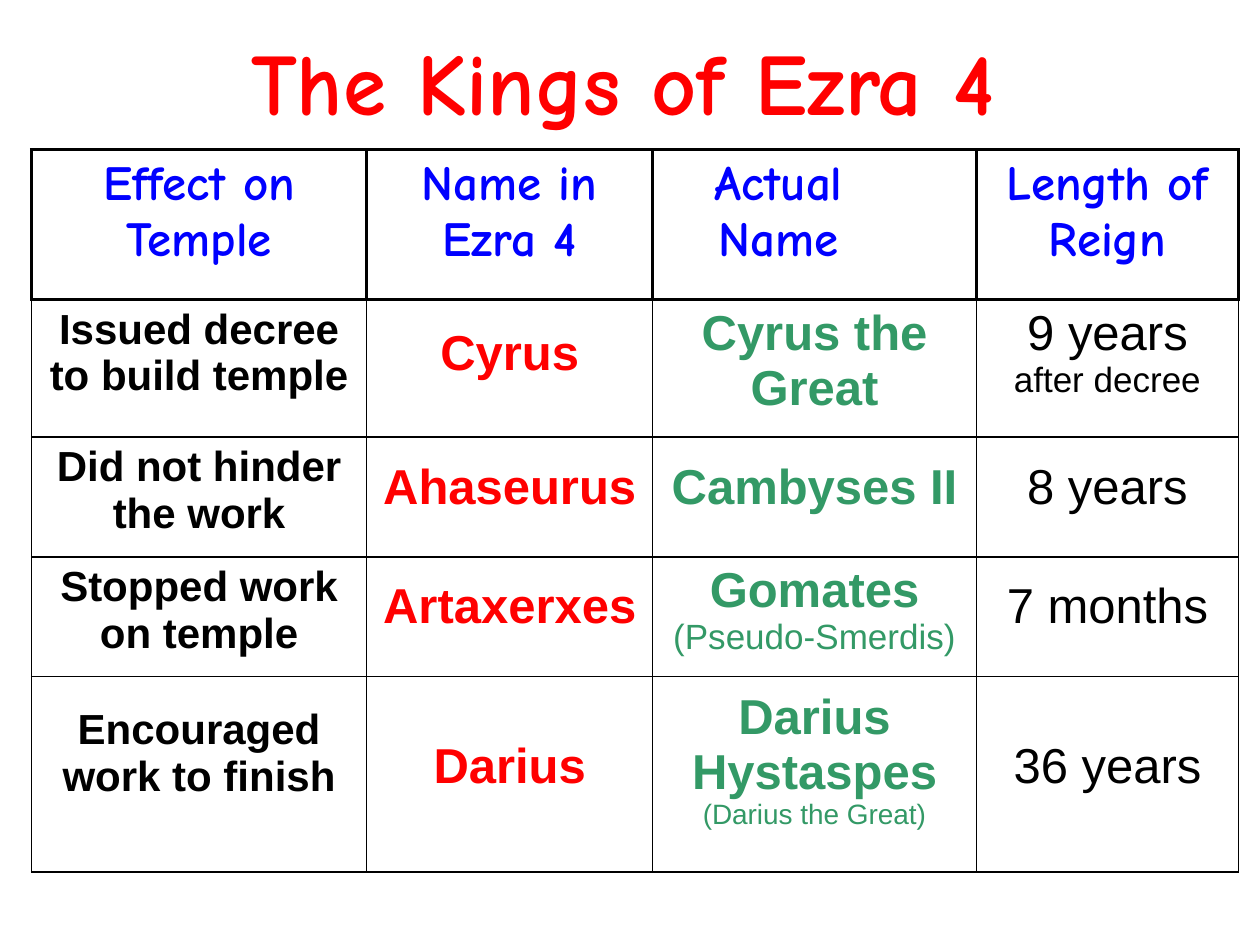
from pptx import Presentation
from pptx.dml.color import RGBColor
from pptx.enum.text import MSO_ANCHOR, PP_ALIGN
from pptx.oxml import parse_xml
from pptx.oxml.ns import nsdecls
from pptx.util import Inches, Pt

COLORS = {"red": "FF0000", "blue": "0000FF", "green": "339966", "black": "000000"}
HEADING_FONT = "Comic Neue"
BODY_FONT = "Arial"

COLUMN_WIDTHS = [2.66, 2.27, 2.57, 2.08]
ROW_HEIGHTS = [1.19, 1.09, 0.95, 0.95, 1.55]
CELL_MARGIN = 0.05

# Each body column: size, colour, bold
COLUMN_STYLES = [(24, "black", True), (28, "red", True),
                 (28, "green", True), (28, "black", False)]

HEADERS = [["Effect on Temple"], ["Name in Ezra 4"],
           ["Actual", "Name"], ["Length of Reign"]]

# Each body cell: gap above the text, then paragraphs of (text, size) runs;
# a size of None takes the column's style, any other size is a light side note
KINGS = [
    [(0, [[("Issued decree to build temple", None)]]),
     (0.16, [[("Cyrus", None)]]),
     (0, [[("Cyrus the Great", None)]]),
     (0, [[("9 years ", None), ("after decree", 20)]])],
    [(0, [[("Did not hinder the work", None)]]),
     (0.13, [[("Ahaseurus", None)]]),
     (0.13, [[("Cambyses II", None)]]),
     (0.13, [[("8 years", None)]])],
    [(0, [[("Stopped work on temple", None)]]),
     (0.13, [[("Artaxerxes", None)]]),
     (0, [[("Gomates ", None), ("(Pseudo-Smerdis)", 20)]]),
     (0.13, [[("7 months", None)]])],
    [(0.19, [[("Encouraged work to finish", None)]]),
     (0.45, [[("Darius", None)]]),
     (0.06, [[("Darius Hystaspes", None)], [("(Darius the Great)", 16)]]),
     (0.45, [[("36 years", None)]])],
]


def add_span(para, text, font, size, color, bold):
    span = para.add_run()
    span.text = text
    span.font.name = font
    span.font.size = Pt(size)
    span.font.bold = bold
    span.font.color.rgb = RGBColor.from_string(COLORS[color])


def next_para(frame, index):
    para = frame.paragraphs[0] if index == 0 else frame.add_paragraph()
    para.alignment = PP_ALIGN.CENTER
    return para


def style_cell(cell, edges):
    """Draw the cell's edges, given as side and width, and clear its fill."""
    properties = cell._tc.get_or_add_tcPr()
    for side, width in edges.items():
        properties.append(parse_xml(
            f'<a:ln{side} {nsdecls("a")} w="{Pt(width)}"><a:solidFill>'
            f'<a:srgbClr val="{COLORS["black"]}"/></a:solidFill></a:ln{side}>'))
    cell.fill.background()


def add_title(page):
    box = page.shapes.add_textbox(Inches(0.41), Inches(0.17), Inches(9.07), Inches(1.23))
    frame = box.text_frame
    frame.word_wrap = True
    frame.vertical_anchor = MSO_ANCHOR.MIDDLE
    frame.margin_bottom = Inches(0.34)
    add_span(next_para(frame, 0), "The Kings of Ezra 4", HEADING_FONT, 50, "red", True)


def fill_header(cell, lines):
    for index, line in enumerate(lines):
        para = next_para(cell.text_frame, index)
        add_span(para, line, HEADING_FONT, 28, "blue", True)
        # The first of two lines sits left of the middle
        if index < len(lines) - 1:
            para._p.get_or_add_pPr().set("marR", str(Inches(0.57)))
    style_cell(cell, dict.fromkeys("LRTB", 2))


def fill_body(cell, gap, paragraphs, style, top_width):
    size, color, bold = style
    cell.margin_top = Inches(CELL_MARGIN + gap)
    for index, runs in enumerate(paragraphs):
        para = next_para(cell.text_frame, index)
        for text, note_size in runs:
            add_span(para, text, BODY_FONT, note_size or size, color,
                     bold and note_size is None)
    style_cell(cell, {"L": 1, "R": 1, "T": top_width, "B": 1})


def add_kings_table(page):
    table = page.shapes.add_table(
        len(ROW_HEIGHTS), len(COLUMN_WIDTHS), Inches(0.25), Inches(1.19),
        Inches(sum(COLUMN_WIDTHS)), Inches(sum(ROW_HEIGHTS))).table
    table.first_row = table.horz_banding = False
    for column, width in zip(table.columns, COLUMN_WIDTHS):
        column.width = Inches(width)
    for row, height in zip(table.rows, ROW_HEIGHTS):
        row.height = Inches(height)

    for column, lines in enumerate(HEADERS):
        fill_header(table.cell(0, column), lines)
    for row, king in enumerate(KINGS, start=1):
        for column, (gap, paragraphs) in enumerate(king):
            fill_body(table.cell(row, column), gap, paragraphs,
                      COLUMN_STYLES[column], 2 if row == 1 else 1)


def main():
    deck = Presentation()
    deck.slide_width = Inches(10)
    deck.slide_height = Inches(7.5)
    page = deck.slides.add_slide(deck.slide_layouts[6])
    add_title(page)
    add_kings_table(page)
    deck.save("out.pptx")


if __name__ == "__main__":
    main()
